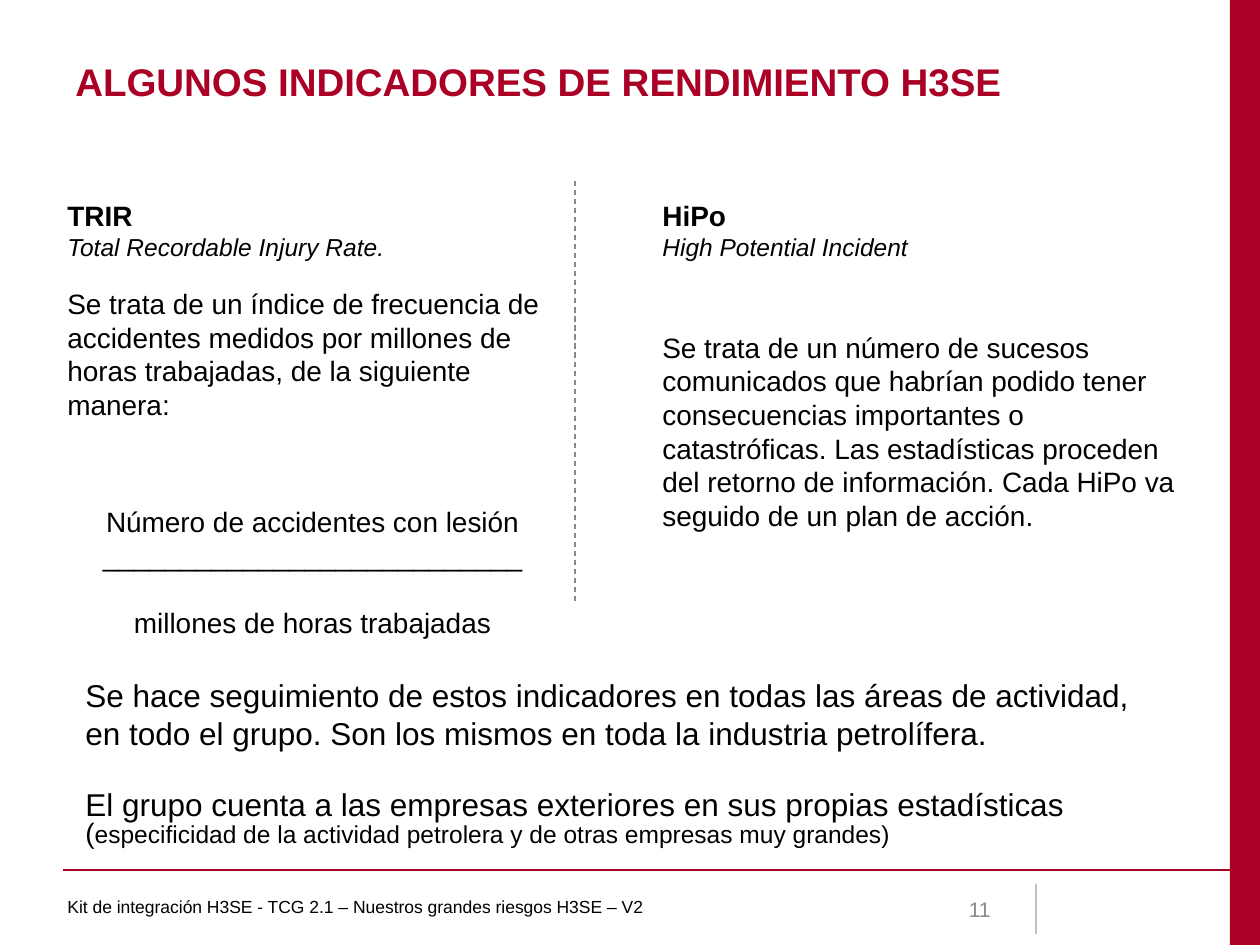
"""Build the slide on H3SE performance indicators, TRIR and HiPo."""
import pptx
import pptx.dml.color
import pptx.enum.dml
import pptx.enum.shapes
import pptx.enum.text
import pptx.oxml
import pptx.oxml.ns
import pptx.util
import lxml.etree

EMU_PER_PX = 914400 / 126
RED = pptx.dml.color.RGBColor(0xAA, 0x00, 0x25)
BLACK = pptx.dml.color.RGBColor(0x00, 0x00, 0x00)
WHITE = pptx.dml.color.RGBColor(0xFF, 0xFF, 0xFF)
GRAY = pptx.dml.color.RGBColor(0x89, 0x89, 0x89)
LEFT = pptx.enum.text.PP_ALIGN.LEFT
CENTER = pptx.enum.text.PP_ALIGN.CENTER
RIGHT = pptx.enum.text.PP_ALIGN.RIGHT
TOP = pptx.enum.text.MSO_ANCHOR.TOP
MIDDLE = pptx.enum.text.MSO_ANCHOR.MIDDLE
SOLID = pptx.enum.dml.MSO_LINE.SOLID
DASH = pptx.enum.dml.MSO_LINE.DASH


def px(*lengths):
    return [pptx.util.Emu(round(length * EMU_PER_PX)) for length in lengths]


def add_text(slide, box, lines, color=BLACK, anchor=TOP):
    shape = slide.shapes.add_textbox(*px(*box))
    text_frame = shape.text_frame
    text_frame.word_wrap = True
    text_frame.vertical_anchor = anchor
    for index, (text, size, style, gap, alignment) in enumerate(lines):
        paragraph = text_frame.add_paragraph() if index else text_frame.paragraphs[0]
        paragraph.text = text
        paragraph.alignment = alignment
        if gap:
            paragraph.space_before = pptx.util.Pt(gap)
        for run in paragraph.runs:
            run.font.name = "Arial"
            run.font.size = pptx.util.Pt(size)
            run.font.bold = style == "bold"
            run.font.italic = style == "italic"
            run.font.color.rgb = color
    return shape


presentation = pptx.Presentation()
presentation.slide_width, presentation.slide_height = px(1260, 945)
slide = presentation.slides.add_slide(presentation.slide_layouts[6])

for ends, color, width, dash, opacity in [
    ((63, 870, 1230, 870), RED, 0.75, SOLID, 100),
    ((1036, 884, 1036, 934), BLACK, 0.5, SOLID, 70),
    ((575, 181, 575, 601), GRAY, 0.75, DASH, 100),
]:
    line = slide.shapes.add_connector(pptx.enum.shapes.MSO_CONNECTOR.STRAIGHT, *px(*ends))
    line.line.color.rgb = color
    line.line.width = pptx.util.Pt(width)
    line.line.dash_style = dash
    properties = line._element.spPr
    lxml.etree.SubElement(properties, pptx.oxml.ns.qn("a:effectLst"))
    if opacity < 100:
        line_color = properties.find(".//" + pptx.oxml.ns.qn("a:srgbClr"))
        alpha = lxml.etree.SubElement(line_color, pptx.oxml.ns.qn("a:alpha"))
        alpha.set("val", str(opacity * 1000))

side_bar = slide.shapes.add_shape(pptx.enum.shapes.MSO_SHAPE.RECTANGLE, *px(1230, 0, 30, 945))
side_bar.shadow.inherit = False
side_bar.fill.solid()
side_bar.fill.fore_color.rgb = RED
side_bar.line.fill.background()

add_text(slide, (903, 884, 100, 50), [("11", 12, "", 0, RIGHT)], GRAY, MIDDLE)
add_text(slide, (63, 38, 1133, 87),
         [("ALGUNOS INDICADORES DE RENDIMIENTO H3SE", 22, "bold", 0, LEFT)], RED, MIDDLE)
add_text(slide, (55, 192, 515, 478), [
    ("TRIR", 16, "bold", 0, LEFT),
    ("Total Recordable Injury Rate.", 14, "italic", 0, LEFT),
    ("Se trata de un índice de frecuencia de accidentes medidos por millones de "
     "horas trabajadas, de la siguiente manera:", 16, "", 14.5, LEFT),
    ("Número de accidentes con lesión ___________________________", 16, "", 48, CENTER),
    ("millones de horas trabajadas", 16, "", 19, CENTER),
])
hipo = add_text(slide, (650, 192, 546, 384), [
    ("HiPo", 16, "bold", 0, LEFT),
    ("High Potential Incident", 14, "italic", 0, LEFT),
    ("Se trata de un número de sucesos comunicados que habrían podido tener "
     "consecuencias importantes o catastróficas. Las estadísticas proceden del "
     "retorno de información. Cada HiPo va seguido de un plan de acción.", 16, "", 39.5, LEFT),
])
hipo.fill.solid()
hipo.fill.fore_color.rgb = WHITE

summary = add_text(slide, (73, 670, 1111, 226), [
    ("Se hace seguimiento de estos indicadores en todas las áreas de actividad, "
     "en todo el grupo. Son los mismos en toda la industria petrolífera.", 18, "", 0, LEFT),
    ("El grupo cuenta a las empresas exteriores en sus propias estadísticas", 18, "", 17, LEFT),
])
summary.text_frame.paragraphs[0].space_after = pptx.util.Pt(6)
closing = summary.text_frame.paragraphs[1]
closing.line_spacing = 0.8
for text, size in [
    (" (", 16),
    ("especificidad de la actividad petrolera y de otras empresas muy grandes)", 14),
]:
    run = closing.add_run()
    run.text = text
    run.font.name = "Arial"
    run.font.size = pptx.util.Pt(size)
    run.font.color.rgb = BLACK

add_text(slide, (55, 890, 915, 50),
         [("Kit de integración H3SE - TCG 2.1 – Nuestros grandes riesgos H3SE – V2",
           10, "", 0, LEFT)])

presentation.save("out.pptx")
